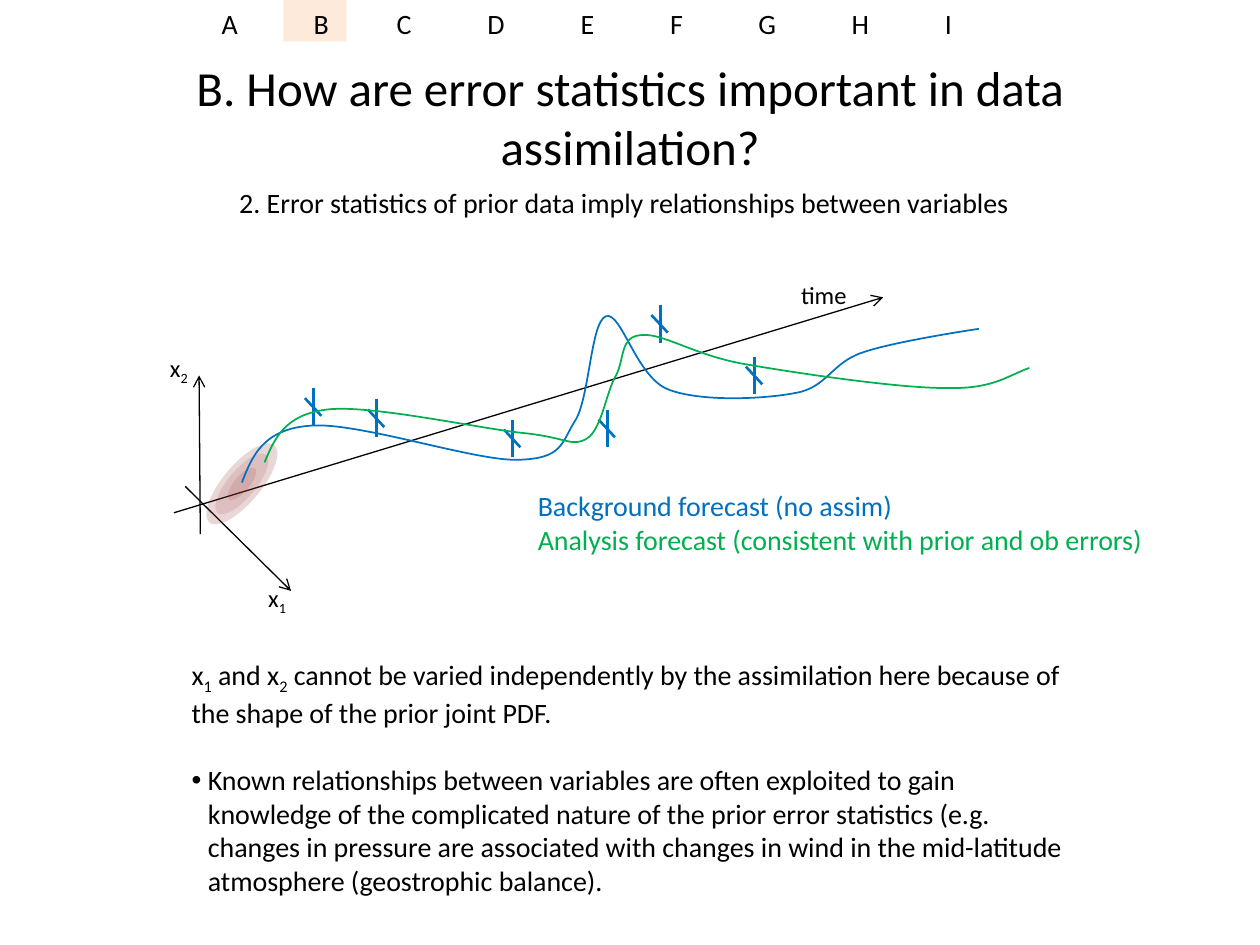
from dataclasses import dataclass

from lxml.etree import SubElement
from pptx import Presentation
from pptx.dml.color import RGBColor
from pptx.enum.shapes import MSO_CONNECTOR as Connector, MSO_SHAPE as Shape
from pptx.enum.text import MSO_ANCHOR as Anchor, MSO_AUTO_SIZE as AutoSize, PP_ALIGN as Align
from pptx.oxml.ns import qn
from pptx.util import Inches, Pt


@dataclass(frozen=True)
class Theme:
    font: str = "Calibri"
    ink: str = "000000"
    background: str = "0070C0"
    analysis: str = "00B050"
    density: str = "953735"
    highlight: str = "FDEADA"
    title: int = 28
    body: int = 16
    label: int = 14


theme = Theme()


def add_span(para, text, size=theme.body, color=theme.ink, subscript=False):
    span = para.add_run()
    span.text = text
    span.font.name = theme.font
    span.font.size = Pt(size)
    span.font.color.rgb = RGBColor.from_string(color)
    if subscript:
        span.font._element.set("baseline", "-25000")


def style_line(shape, color, width, arrow=False):
    shape.line.color.rgb = RGBColor.from_string(color)
    shape.line.width = Pt(width)
    if arrow:
        outline = shape.element.spPr.find(qn("a:ln"))
        SubElement(outline, qn("a:tailEnd"), type="arrow")
    SubElement(shape.element.spPr, qn("a:effectLst"))


deck = Presentation()
deck.slide_width, deck.slide_height = Inches(10), Inches(7.5)
page = deck.slides.add_slide(deck.slide_layouts[1])

title = page.shapes.title
title.left, title.top, title.width, title.height = map(Inches, (0.5, 0.3, 9, 1.25))
title.text_frame.auto_size = AutoSize.NONE
title.text_frame.vertical_anchor = Anchor.MIDDLE
heading = title.text_frame.paragraphs[0]
heading.alignment = Align.CENTER
add_span(heading, "B. How are error statistics important in data assimilation?", size=theme.title)

body = page.placeholders[1]
body.left, body.top, body.width, body.height = map(Inches, (1.42, 5.17, 7.17, 1.99))
body.text_frame.auto_size = AutoSize.NONE
remark = body.text_frame.paragraphs[0]
remark.space_before = Pt(0)
remark_format = remark._p.get_or_add_pPr()
remark_format.set("marL", "0")
remark_format.set("indent", "0")
SubElement(remark_format, qn("a:buNone"))
for text, subscript in (
    ("x", False),
    ("1", True),
    (" and x", False),
    ("2", True),
    (" cannot be varied independently by the assimilation here because of "
     "the shape of the prior joint PDF.", False),
):
    add_span(remark, text, subscript=subscript)

bullet = body.text_frame.add_paragraph()
bullet.space_before = Pt(19)
bullet_format = bullet._p.get_or_add_pPr()
bullet_format.set("marL", str(Inches(0.13)))
bullet_format.set("indent", str(-Inches(0.13)))
SubElement(bullet_format, qn("a:buFont"), typeface="Arial")
SubElement(bullet_format, qn("a:buChar"), char="•")
add_span(
    bullet,
    "Known relationships between variables are often exploited to gain knowledge of the "
    "complicated nature of the prior error statistics (e.g. changes in pressure are associated "
    "with changes in wind in the mid-latitude atmosphere (geostrophic balance).",
)

for ends in (
    (1.59, 4.24, 1.58, 2.98),
    (1.47, 3.86, 2.31, 4.69),
    (1.38, 4.07, 7.01, 2.36),
):
    axis = page.shapes.add_connector(Connector.STRAIGHT, *map(Inches, ends))
    style_line(axis, theme.ink, 0.75, arrow=True)

density = page.shapes.add_group_shape()
for width, height, opacity in ((0.8, 0.3, 20), (0.6, 0.22, 15), (0.32, 0.12, 15)):
    contour = density.shapes.add_shape(
        Shape.OVAL, Inches(1.92 - width / 2), Inches(3.84 - height / 2), Inches(width), Inches(height)
    )
    contour.rotation = -50
    contour.shadow.inherit = False
    contour.line.fill.background()
    contour.fill.solid()
    contour.fill.fore_color.rgb = RGBColor.from_string(theme.density)
    tint = next(contour.element.spPr.iter(qn("a:srgbClr")))
    SubElement(tint, qn("a:alpha"), val=str(opacity * 1000))

for x, y in ((2.49, 3.08), (5.99, 2.83), (5.24, 2.42), (4.07, 3.33), (4.82, 3.25), (2.99, 3.17)):
    observation = page.shapes.add_group_shape()
    for ends in ((x, y, x, y + 0.3), (x + 0.06, y + 0.22, x - 0.07, y + 0.08)):
        bar = observation.shapes.add_connector(Connector.STRAIGHT, *map(Inches, ends))
        style_line(bar, theme.background, 1.5)

background_points = (
    (1.92, 3.83), (2, 3.62), (2.09, 3.41), (2.45, 3.38), (2.82, 3.34), (3.76, 3.66), (4.11, 3.65),
    (4.47, 3.64), (4.45, 3.52), (4.57, 3.33), (4.68, 3.14), (4.69, 2.55), (4.81, 2.51),
    (4.93, 2.47), (5.05, 2.99), (5.3, 3.09), (5.55, 3.19), (6.05, 3.17), (6.31, 3.12),
    (6.56, 3.08), (6.6, 2.88), (6.84, 2.8), (7.09, 2.71), (7.77, 2.61), (7.77, 2.61),
)
analysis_points = (
    (2.1, 3.67), (2.18, 3.48), (2.26, 3.29), (2.6, 3.25), (2.95, 3.21), (3.84, 3.41), (4.18, 3.44),
    (4.52, 3.48), (4.54, 3.55), (4.66, 3.48), (4.78, 3.4), (4.81, 3.11), (4.89, 2.98),
    (4.96, 2.84), (4.92, 2.67), (5.09, 2.66), (5.26, 2.64), (5.51, 2.82), (5.91, 2.89),
    (6.31, 2.96), (7.12, 3.08), (7.5, 3.08), (7.88, 3.09), (7.98, 2.99), (8.17, 2.92),
)
for points, color in ((background_points, theme.background), (analysis_points, theme.analysis)):
    start, *controls = [(Inches(x), Inches(y)) for x, y in points]
    builder = page.shapes.build_freeform(*start)
    builder.add_line_segments(controls, close=False)
    forecast = builder.convert_to_shape()
    forecast.fill.background()
    style_line(forecast, color, 1)
    track = next(forecast.element.iter(qn("a:path")))
    steps = track.findall(qn("a:lnTo"))
    for first in range(0, len(steps), 3):
        curve = SubElement(track, qn("a:cubicBezTo"))
        for step in steps[first:first + 3]:
            curve.append(step[0])
            track.remove(step)

highlight = page.shapes.add_shape(Shape.RECTANGLE, Inches(2.25), 0, Inches(0.5), Inches(0.33))
highlight.shadow.inherit = False
highlight.line.fill.background()
highlight.fill.solid()
highlight.fill.fore_color.rgb = RGBColor.from_string(theme.highlight)

captions = (
    ((1.8, 1.42, 6.39, 0.37), False, theme.body,
     [[("2. Error statistics of prior data imply relationships between variables", theme.ink, False)]]),
    ((2.03, 4.58, 0.47, 0.34), True, theme.label, [[("x", theme.ink, False), ("1", theme.ink, True)]]),
    ((1.25, 2.75, 0.47, 0.34), True, theme.label, [[("x", theme.ink, False), ("2", theme.ink, True)]]),
    ((6.26, 2.17, 0.57, 0.34), False, theme.label, [[("time", theme.ink, False)]]),
    ((4.17, 3.83, 5.22, 0.64), False, theme.body,
     [[("Background forecast (no assim)", theme.background, False)],
      [("Analysis forecast (consistent with prior and ob errors)", theme.analysis, False)]]),
)
for place, wrap, size, lines in captions:
    frame = page.shapes.add_textbox(*map(Inches, place)).text_frame
    frame.word_wrap = wrap
    for index, line in enumerate(lines):
        para = frame.add_paragraph() if index else frame.paragraphs[0]
        for text, color, subscript in line:
            add_span(para, text, size=size, color=color, subscript=subscript)

sections = page.shapes.add_textbox(Inches(1.66), 0, Inches(6.09), Inches(0.37))
sections.text_frame.word_wrap = True
letters = sections.text_frame.paragraphs[0]
add_span(letters, "\t".join("ABCDEFGHI"))
tabs = SubElement(letters._p.get_or_add_pPr(), qn("a:tabLst"))
for offset in (0.73, 1.39, 2.11, 2.85, 3.56, 4.26, 5, 5.74):
    SubElement(tabs, qn("a:tab"), pos=str(Inches(offset)), algn="l")

deck.save("out.pptx")
